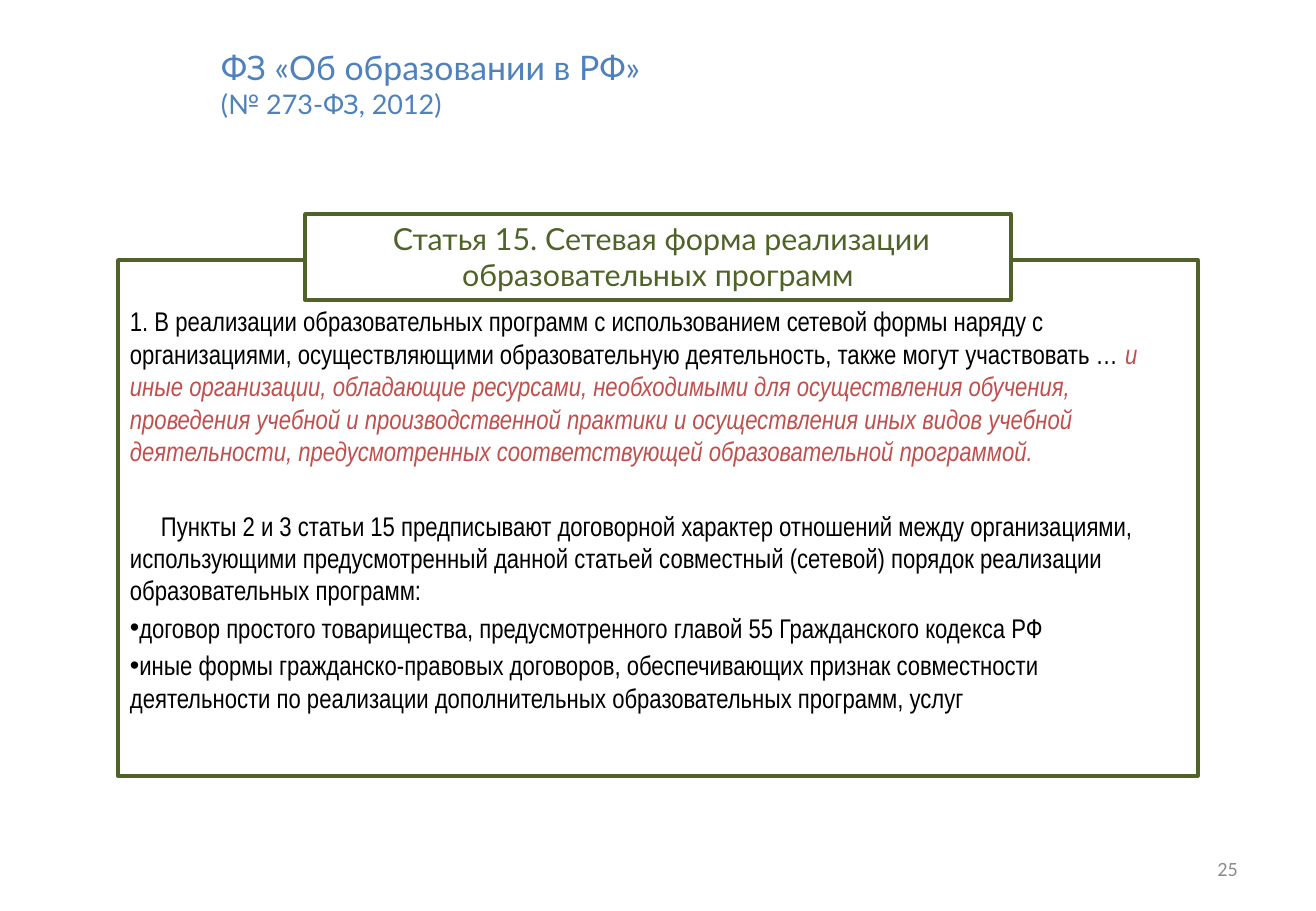
from lxml import etree
from pptx import Presentation, util as u
from pptx.dml.color import RGBColor
from pptx.enum import shapes, text
from pptx.oxml.ns import qn


class Theme:
    white, green, blue = "FFFFFF", "4F6228", "4F81BD"
    red, black, grey = "C0504D", "000000", "8C8C8C"
    title, subtitle, heading, body, number = 20, 16, 18, 16, 12
    head_font, body_font, number_font = "Lato", "Arial Narrow", "Calibri"
    border = 2


def px(n):
    return u.Emu(n * 7526)


def set_attrs(obj, values):
    for name, value in values.items():
        setattr(obj, name, value)


def prepare_frame(sp, **values):
    """Wrap the text and set equal default insets."""
    tf = sp.text_frame
    set_attrs(tf, dict(word_wrap=True, margin_left=px(12), margin_right=px(12),
                       margin_top=px(6), margin_bottom=px(6)) | values)
    return tf


def add_paragraph(tf, runs, first=False, indent=0, bullet=None, **values):
    """Each run is (text, size, font, colour, italic)."""
    p = tf.paragraphs[0] if first else tf.add_paragraph()
    set_attrs(p, values)
    pPr = p._p.get_or_add_pPr()
    pPr.set("marL", "0")
    pPr.set("indent", str(px(indent)))
    if bullet:
        etree.SubElement(pPr, qn("a:buFont")).set("typeface", "Arial")
        etree.SubElement(pPr, qn("a:buChar")).set("char", bullet)
    for words, size, font, colour, italic in runs:
        r = p.add_run()
        r.text = words
        set_attrs(r.font, dict(size=u.Pt(size), name=font, italic=italic))
        r.font.color.rgb = RGBColor.from_string(colour)


def add_frame(s, box):
    """White rectangle with a green border."""
    sp = s.shapes.add_shape(shapes.MSO_SHAPE.RECTANGLE, *map(px, box))
    sp.shadow.inherit = False
    sp.fill.solid()
    sp.fill.fore_color.rgb = RGBColor.from_string(Theme.white)
    sp.line.color.rgb = RGBColor.from_string(Theme.green)
    sp.line.width = u.Pt(Theme.border)
    return sp


def law_title(s, box):
    sp = s.shapes.add_textbox(*map(px, box))
    tf = prepare_frame(sp, vertical_anchor=text.MSO_ANCHOR.MIDDLE)
    lines = [("ФЗ «Об образовании в РФ»", Theme.title),
             ("(№ 273-ФЗ, 2012)", Theme.subtitle)]
    for i, (words, size) in enumerate(lines):
        add_paragraph(tf, [(words, size, Theme.head_font, Theme.blue, False)], first=i == 0)


def article(s, box):
    left, top, width, height = box
    # Framed article text
    tf = prepare_frame(add_frame(s, box), margin_top=px(45),
                       vertical_anchor=text.MSO_ANCHOR.TOP)

    def run(words, colour=Theme.black, italic=False):
        return words, Theme.body, Theme.body_font, colour, italic

    paragraphs = [
        ([run("1. В реализации образовательных программ с использованием сетевой формы "
              "наряду с организациями, осуществляющими образовательную деятельность, "
              "также могут участвовать …"),
          run(" и иные организации, обладающие ресурсами, необходимыми для осуществления "
              "обучения, проведения учебной и производственной практики и осуществления "
              "иных видов учебной деятельности, предусмотренных соответствующей "
              "образовательной программой.", Theme.red, True)],
         dict(first=True)),
        ([run("Пункты 2 и 3 статьи 15 предписывают договорной характер отношений между "
              "организациями, использующими предусмотренный данной статьей совместный "
              "(сетевой) порядок реализации образовательных программ:")],
         dict(indent=31, space_before=u.Pt(25))),
    ]
    contracts = ["договор простого товарищества, предусмотренного главой 55 "
                 "Гражданского кодекса РФ",
                 "иные формы гражданско-правовых договоров, обеспечивающих признак "
                 "совместности деятельности по реализации дополнительных "
                 "образовательных программ, услуг"]
    paragraphs += [([run(words)], dict(bullet="•", space_before=u.Pt(3)))
                   for words in contracts]
    for runs, values in paragraphs:
        add_paragraph(tf, runs, alignment=text.PP_ALIGN.LEFT, **values)

    # Heading centred over the top edge
    head_w, head_h = 706, 86
    head = add_frame(s, (left + (width - head_w) // 2, top - 46, head_w, head_h))
    tf = prepare_frame(head, vertical_anchor=text.MSO_ANCHOR.TOP)
    add_paragraph(tf, [("Статья 15. Сетевая форма реализации образовательных программ",
                        Theme.heading, Theme.head_font, Theme.green, False)],
                  first=True, indent=7, alignment=text.PP_ALIGN.CENTER)


def page_number(s, box):
    sp = s.shapes.add_textbox(*map(px, box))
    tf = prepare_frame(sp, vertical_anchor=text.MSO_ANCHOR.MIDDLE)
    add_paragraph(tf, [("25", Theme.number, Theme.number_font, Theme.grey, False)],
                  first=True, alignment=text.PP_ALIGN.RIGHT)


def main():
    prs = Presentation()
    set_attrs(prs, dict(slide_width=px(1316), slide_height=px(911)))
    s = prs.slides.add_slide(prs.slide_layouts[6])
    law_title(s, (209, 26, 1024, 114))
    article(s, (118, 260, 1080, 516))
    page_number(s, (943, 844, 307, 49))
    prs.save("out.pptx")


if __name__ == "__main__":
    main()
